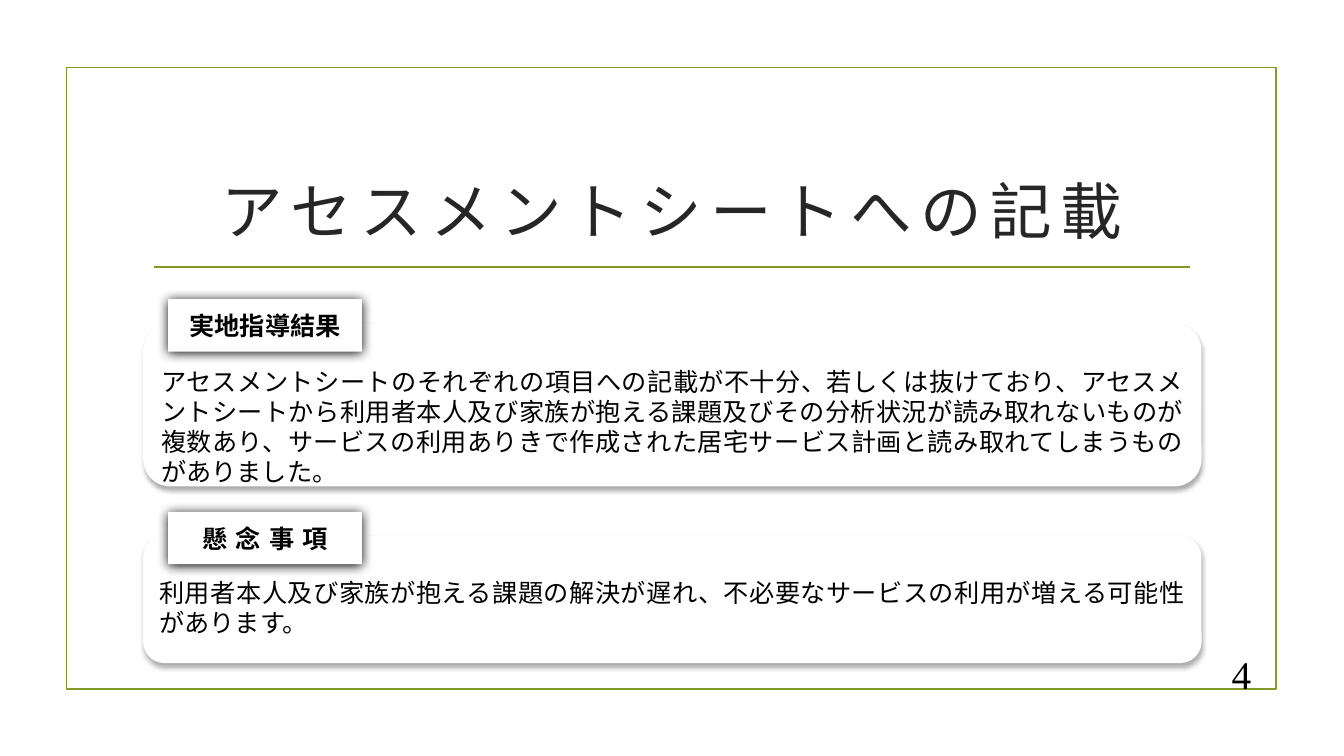
import pptx
import pptx.util
import pptx.dml.color
import pptx.enum.shapes
import pptx.enum.text
import pptx.oxml
import pptx.oxml.ns

Cm = pptx.util.Cm
Pt = pptx.util.Pt
RGBColor = pptx.dml.color.RGBColor
Kind = pptx.enum.shapes.MSO_SHAPE
Align = pptx.enum.text.PP_ALIGN
Anchor = pptx.enum.text.MSO_ANCHOR

GREEN = RGBColor(0x83, 0x99, 0x2A)
WHITE = RGBColor(0xFF, 0xFF, 0xFF)
BLACK = RGBColor(0, 0, 0)
DARK = RGBColor(0x26, 0x26, 0x26)


def write(shape, text, size, align, anchor, color=BLACK, bold=False, gap=0):
    frame = shape.text_frame
    frame.word_wrap = True
    frame.vertical_anchor = anchor
    para = frame.paragraphs[0]
    para.alignment = align
    run = para.add_run()
    run.text = text
    run.font.name = "Times New Roman"
    run.font.size = Pt(size)
    run.font.bold = bold
    run.font.color.rgb = color
    if gap:
        run.font._element.set("spc", str(gap * 100))
    return para


def panel(kind, left, top, width, height, alpha, blur, dist):
    shape = slide.shapes.add_shape(kind, Cm(left), Cm(top), Cm(width), Cm(height))
    shape.fill.solid()
    shape.fill.fore_color.rgb = WHITE
    shape.line.fill.background()
    shape.shadow.inherit = False
    effects = shape._element.spPr.find(pptx.oxml.ns.qn("a:effectLst"))
    effects.append(pptx.oxml.parse_xml(
        f'<a:outerShdw {pptx.oxml.ns.nsdecls("a")} blurRad="{Pt(blur)}" '
        f'dist="{Pt(dist)}" dir="5400000" algn="ctr" rotWithShape="0">'
        f'<a:srgbClr val="{BLACK}"><a:alpha val="{alpha * 1000}"/></a:srgbClr>'
        '</a:outerShdw>'))
    return shape


deck = pptx.Presentation()
deck.slide_width = Cm(33.87)
deck.slide_height = Cm(19.05)
slide = deck.slides.add_slide(deck.slide_layouts[5])

border = slide.shapes.add_shape(Kind.RECTANGLE, Cm(1.68), Cm(1.7), Cm(30.48), Cm(15.67))
border.fill.background()
border.shadow.inherit = False
rule = slide.shapes.add_connector(
    pptx.enum.shapes.MSO_CONNECTOR.STRAIGHT, Cm(3.89), Cm(6.73), Cm(30), Cm(6.73))
rule._element.spPr.append(
    pptx.oxml.parse_xml(f'<a:effectLst {pptx.oxml.ns.nsdecls("a")}/>'))
for edge in (border, rule):
    edge.line.color.rgb = GREEN
    edge.line.width = Pt(1.25)

title = slide.shapes.title
title.left, title.top, title.width, title.height = Cm(3.61), Cm(2.72), Cm(26.67), Cm(3.63)
write(title, "アセスメントシートへの記載", 44, Align.CENTER, Anchor.BOTTOM, DARK, gap=6)

cards = [
    (8.15, 4.11, "実地指導結果", 0,
     "アセスメントシートのそれぞれの項目への記載が不十分、若しくは抜けており、"
     "アセスメントシートから利用者本人及び家族が抱える課題及びその分析状況が読み取れないものが複数あり、"
     "サービスの利用ありきで作成された居宅サービス計画と読み取れてしまうものがありました。"),
    (13.51, 3.2, "懸念事項", 6,
     "利用者本人及び家族が抱える課題の解決が遅れ、"
     "不必要なサービスの利用が増える可能性があります。"),
]
for top, height, head, gap, body in cards:
    card = panel(Kind.ROUNDED_RECTANGLE, 3.61, top, 26.67, height, 32, 3.5, 2.2)
    card.text_frame.margin_top = Cm(0.89)
    para = write(card, body, 18, Align.JUSTIFY, Anchor.TOP)
    para.line_spacing = Pt(21.4)
    label = panel(Kind.RECTANGLE, 4.24, top - 0.61, 4.88, 1.32, 100, 8.5, 1)
    write(label, head, 18, Align.CENTER, Anchor.MIDDLE, bold=True, gap=gap)

number = slide.shapes.add_textbox(Cm(30.28), Cm(16.59), Cm(1.5), Cm(0.79))
write(number, "4", 28, Align.RIGHT, Anchor.MIDDLE)

deck.save("out.pptx")
